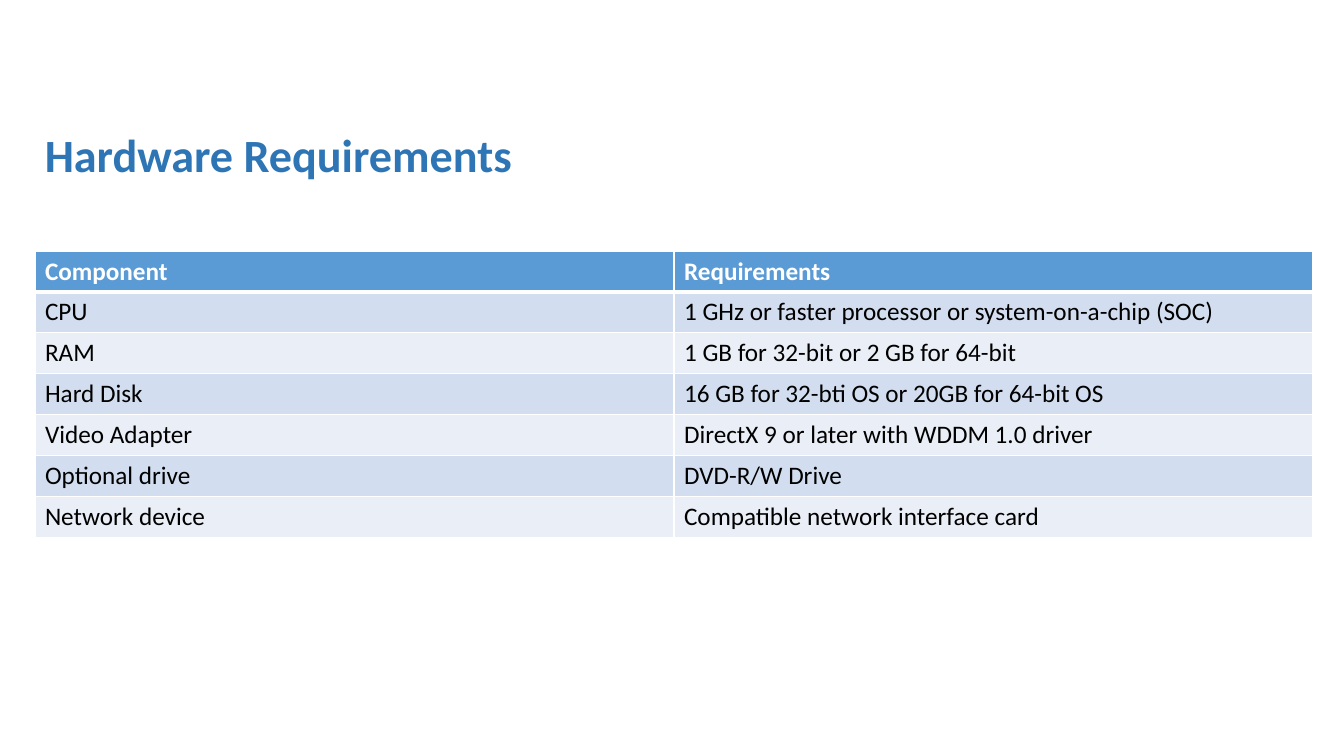
from dataclasses import dataclass

from lxml import etree
from pptx import Presentation
from pptx.dml.color import RGBColor
from pptx.enum.text import MSO_ANCHOR
from pptx.oxml.ns import qn
from pptx.util import Inches, Pt

MIDDLE = MSO_ANCHOR.MIDDLE
SLIDE_WIDTH, SLIDE_HEIGHT = 13.33, 7.5
BLANK_LAYOUT = 6


@dataclass(frozen=True)
class Theme:
    font: str = "Calibri"
    title_size: int = 33
    table_size: int = 18
    title: str = "2E75B6"
    header_fill: str = "5B9BD5"
    header_text: str = "FFFFFF"
    body_text: str = "000000"
    bands: tuple = ("D2DEEF", "EAEFF7")
    border: str = "FFFFFF"
    thin: int = 1
    thick: int = 3


class SlideBuilder:
    """Places elements by percentages of the slide's width and height."""

    def __init__(self, slide, theme):
        self.slide = slide
        self.theme = theme

    def area(self, left, top, width, height):
        across, down = SLIDE_WIDTH / 100, SLIDE_HEIGHT / 100
        return (Inches(left * across), Inches(top * down),
                Inches(width * across), Inches(height * down))

    def set_text(self, paragraph, text, size, color, bold):
        paragraph.text = text
        font = paragraph.font
        font.name, font.size, font.bold = self.theme.font, Pt(size), bold
        font.color.rgb = RGBColor.from_string(color)

    def title(self, text, *shares):
        frame = self.slide.shapes.add_textbox(*self.area(*shares)).text_frame
        frame.word_wrap = True
        frame.vertical_anchor = MIDDLE
        paragraph = frame.paragraphs[0]
        paragraph.line_spacing = 0.9
        self.set_text(paragraph, text, self.theme.title_size, self.theme.title, True)

    def border(self, cell, side, width):
        properties = cell._tc.get_or_add_tcPr()
        line = etree.SubElement(properties, qn(f"a:ln{side}"), w=str(Pt(width)))
        fill = etree.SubElement(line, qn("a:solidFill"))
        etree.SubElement(fill, qn("a:srgbClr"), val=self.theme.border)

    def table(self, rows, *shares):
        theme = self.theme
        table = self.slide.shapes.add_table(
            len(rows), len(rows[0]), *self.area(*shares)).table
        for row_index, row in enumerate(rows):
            header = row_index == 0
            fill = theme.header_fill if header else theme.bands[(row_index - 1) % 2]
            color = theme.header_text if header else theme.body_text
            # The rule below the header is shared with the first body row
            widths = {"L": theme.thin, "R": theme.thin,
                      "T": theme.thick if row_index == 1 else theme.thin,
                      "B": theme.thick if header else theme.thin}
            for column_index, text in enumerate(row):
                cell = table.cell(row_index, column_index)
                for side, width in widths.items():
                    self.border(cell, side, width)
                cell.fill.solid()
                cell.fill.fore_color.rgb = RGBColor.from_string(fill)
                self.set_text(cell.text_frame.paragraphs[0], text,
                              theme.table_size, color, header)


REQUIREMENTS = [
    ("Component", "Requirements"),
    ("CPU", "1 GHz or faster processor or system-on-a-chip (SOC)"),
    ("RAM", "1 GB for 32-bit or 2 GB for 64-bit"),
    ("Hard Disk", "16 GB for 32-bti OS or 20GB for 64-bit OS"),
    ("Video Adapter", "DirectX 9 or later with WDDM 1.0 driver"),
    ("Optional drive", "DVD-R/W Drive"),
    ("Network device", "Compatible network interface card"),
]


def main():
    presentation = Presentation()
    presentation.slide_width = Inches(SLIDE_WIDTH)
    presentation.slide_height = Inches(SLIDE_HEIGHT)
    slide = presentation.slides.add_slide(presentation.slide_layouts[BLANK_LAYOUT])
    builder = SlideBuilder(slide, Theme())

    # Heading
    builder.title("Hardware Requirements", 2.6, 14.3, 95.1, 13.2)

    # Requirements by component
    builder.table(REQUIREMENTS, 2.6, 33.2, 95.1, 37.9)

    presentation.save("out.pptx")


if __name__ == "__main__":
    main()
